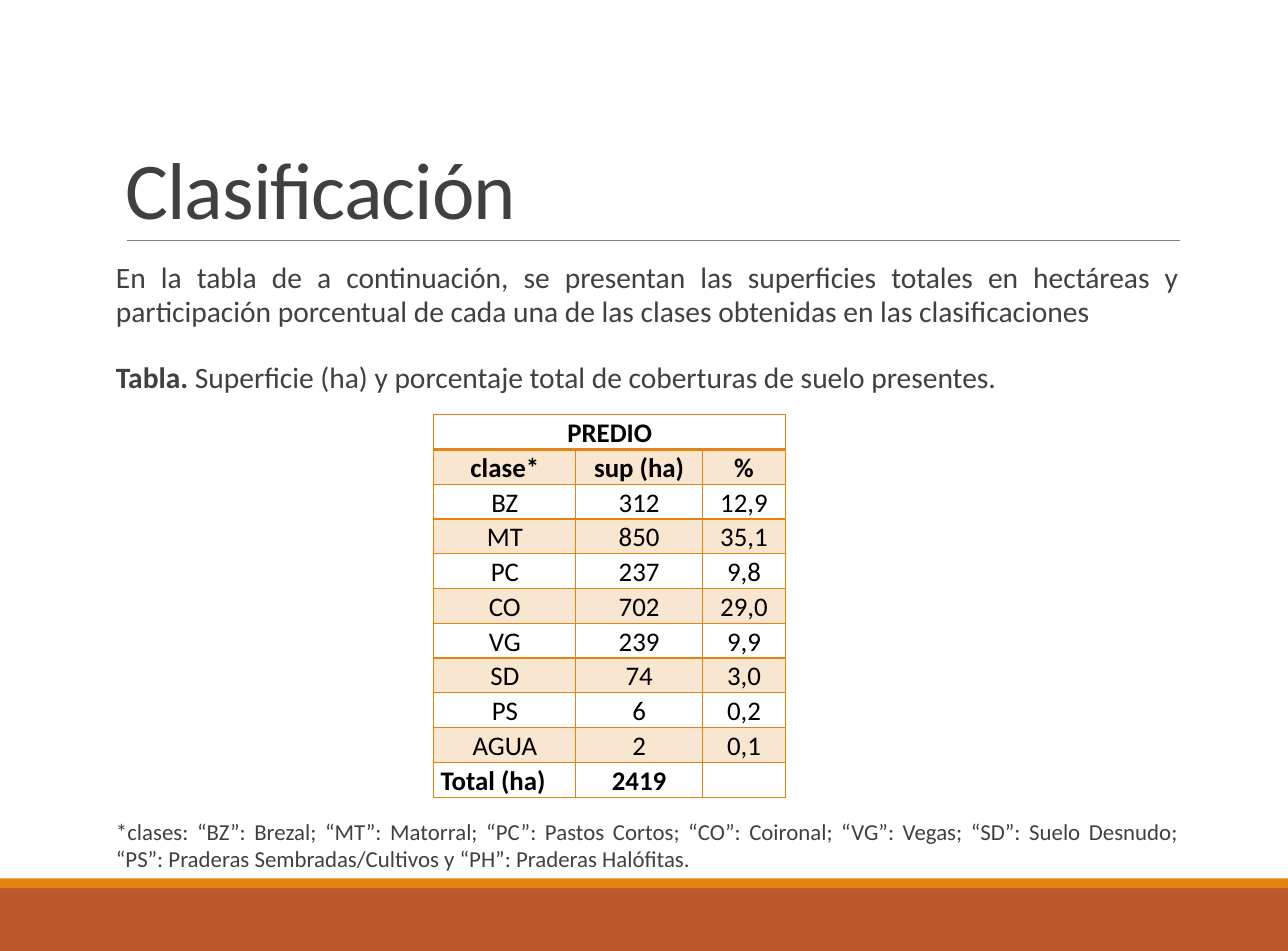
from lxml.etree import SubElement
from pptx import Presentation
from pptx.dml.color import RGBColor
from pptx.enum.shapes import MSO_CONNECTOR, MSO_SHAPE
from pptx.enum.text import MSO_ANCHOR, PP_ALIGN
from pptx.oxml.ns import qn
from pptx.util import Inches, Pt

COLORS = {
    "text": "404040",
    "table_text": "000000",
    "rule": "808080",
    "orange": "E48312",
    "rust": "BD582C",
    "band": "F9E6D0",
}
FONT = "Calibri"
COLUMN_WIDTHS = [1.47, 1.31, 0.86]
ROW_HEIGHT = 0.36
ROWS = [
    ("PREDIO", "", ""),
    ("clase*", "sup (ha)", "%"),
    ("BZ", "312", "12,9"),
    ("MT", "850", "35,1"),
    ("PC", "237", "9,8"),
    ("CO", "702", "29,0"),
    ("VG", "239", "9,9"),
    ("SD", "74", "3,0"),
    ("PS", "6", "0,2"),
    ("AGUA", "2", "0,1"),
    ("Total (ha)", "2419", ""),
]
INTRO = [
    ("En la tabla de a continuación, se presentan las superficies totales en hectáreas "
     "y participación porcentual de cada una de las clases obtenidas en las clasificaciones", False),
]
CAPTION = [
    ("Tabla. ", True),
    ("Superficie (ha) y porcentaje total de coberturas de suelo presentes.", False),
]
FOOTNOTE = [
    ("*clases: “BZ”: Brezal; “MT”: Matorral; “PC”: Pastos Cortos; “CO”: Coironal; "
     "“VG”: Vegas; “SD”: Suelo Desnudo; “PS”: Praderas Sembradas/Cultivos "
     "y “PH”: Praderas Halófitas.", False),
]


def color(name):
    return RGBColor.from_string(COLORS[name])


def style_paragraph(paragraph, size, color_name, align, line_spacing):
    paragraph.alignment = align
    paragraph.line_spacing = line_spacing
    paragraph.font.name = FONT
    paragraph.font.size = Pt(size)
    paragraph.font.color.rgb = color(color_name)


def add_band(slide, top, height, color_name):
    band = slide.shapes.add_shape(
        MSO_SHAPE.RECTANGLE, 0, Inches(top), Inches(13.33), Inches(height))
    band.shadow.inherit = False
    band.fill.solid()
    band.fill.fore_color.rgb = color(color_name)
    band.line.fill.background()


def add_title_rule(slide):
    rule = slide.shapes.add_connector(
        MSO_CONNECTOR.STRAIGHT, Inches(1.31), Inches(2.49), Inches(12.21), Inches(2.49))
    rule.line.color.rgb = color("rule")
    rule.line.width = Pt(0.5)
    SubElement(rule._element.spPr, qn("a:effectLst"))


def add_text_frame(slide, top, height):
    frame = slide.shapes.add_textbox(
        Inches(1.2), Inches(top), Inches(11), Inches(height)).text_frame
    frame.word_wrap = True
    return frame


def add_title(slide):
    frame = add_text_frame(slide, 0.41, 2.08)
    frame.vertical_anchor = MSO_ANCHOR.BOTTOM
    heading = frame.paragraphs[0]
    run = heading.add_run()
    run.text = "Clasificación"
    run._r.get_or_add_rPr().set("spc", "-70")
    style_paragraph(heading, 60, "text", PP_ALIGN.LEFT, 0.85)


def add_body(slide, top, height, size, paragraphs):
    """Add justified paragraphs, each a list of (text, bold) pairs."""
    frame = add_text_frame(slide, top, height)
    frame.margin_left = frame.margin_right = 0
    for index, parts in enumerate(paragraphs):
        paragraph = frame.add_paragraph() if index else frame.paragraphs[0]
        if index:
            paragraph.space_before = Pt(23.8)
        for text, bold in parts:
            run = paragraph.add_run()
            run.text = text
            if bold:
                run.font.bold = True
        style_paragraph(paragraph, size, "text", PP_ALIGN.JUSTIFY, 0.97)


def set_borders(cell, bottom_width, top_width):
    properties = cell._tc.get_or_add_tcPr()
    widths = {"a:lnL": 1, "a:lnR": 1, "a:lnT": top_width, "a:lnB": bottom_width}
    for side, width in widths.items():
        border = SubElement(properties, qn(side), w=str(Pt(width)))
        fill = SubElement(border, qn("a:solidFill"))
        SubElement(fill, qn("a:srgbClr"), val=COLORS["orange"])


def fill_cell(cell, text, row, column):
    total_row = len(ROWS) - 1
    cell.margin_left = cell.margin_right = Inches(0.07)
    cell.margin_top = cell.margin_bottom = 0
    set_borders(cell, bottom_width=2 if row == 0 else 1, top_width=2 if row == 1 else 1)
    if row % 2:
        cell.fill.solid()
        cell.fill.fore_color.rgb = color("band")
    else:
        cell.fill.background()
    cell.text = text
    paragraph = cell.text_frame.paragraphs[0]
    total_label = row == total_row and column == 0
    align = PP_ALIGN.JUSTIFY if total_label else PP_ALIGN.CENTER
    style_paragraph(paragraph, 20, "table_text", align, 1.07)
    paragraph.font.bold = row in (0, 1, total_row)


def add_cover_table(slide):
    table = slide.shapes.add_table(
        len(ROWS), len(COLUMN_WIDTHS), Inches(4.49), Inches(4.29),
        Inches(sum(COLUMN_WIDTHS)), Inches(ROW_HEIGHT * len(ROWS))).table
    table.first_row = table.horz_banding = False
    for column, width in zip(table.columns, COLUMN_WIDTHS):
        column.width = Inches(width)
    for row, values in enumerate(ROWS):
        table.rows[row].height = Inches(ROW_HEIGHT)
        for column, text in enumerate(values):
            fill_cell(table.cell(row, column), text, row, column)
    table.cell(0, 0).merge(table.cell(0, 2))


def main():
    presentation = Presentation()
    presentation.slide_width = Inches(13.33)
    presentation.slide_height = Inches(9.84)
    slide = presentation.slides.add_slide(presentation.slide_layouts[6])
    add_band(slide, 9.19, 0.65, "rust")
    add_band(slide, 9.09, 0.1, "orange")
    add_title_rule(slide)
    add_body(slide, 2.65, 1.6, 22, [INTRO, CAPTION])
    add_body(slide, 8.43, 0.66, 17, [FOOTNOTE])
    add_title(slide)
    add_cover_table(slide)
    presentation.save("out.pptx")


if __name__ == "__main__":
    main()
